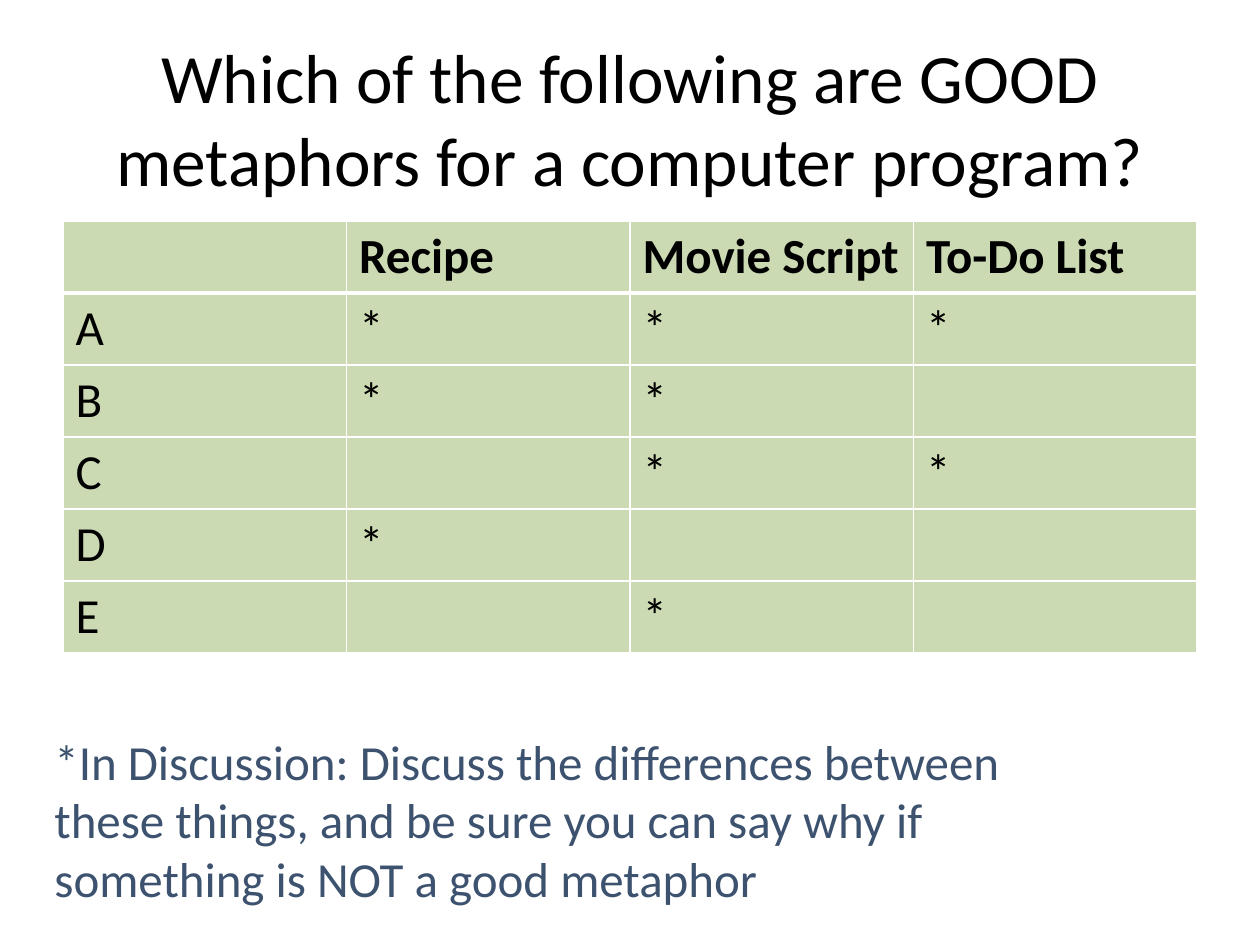
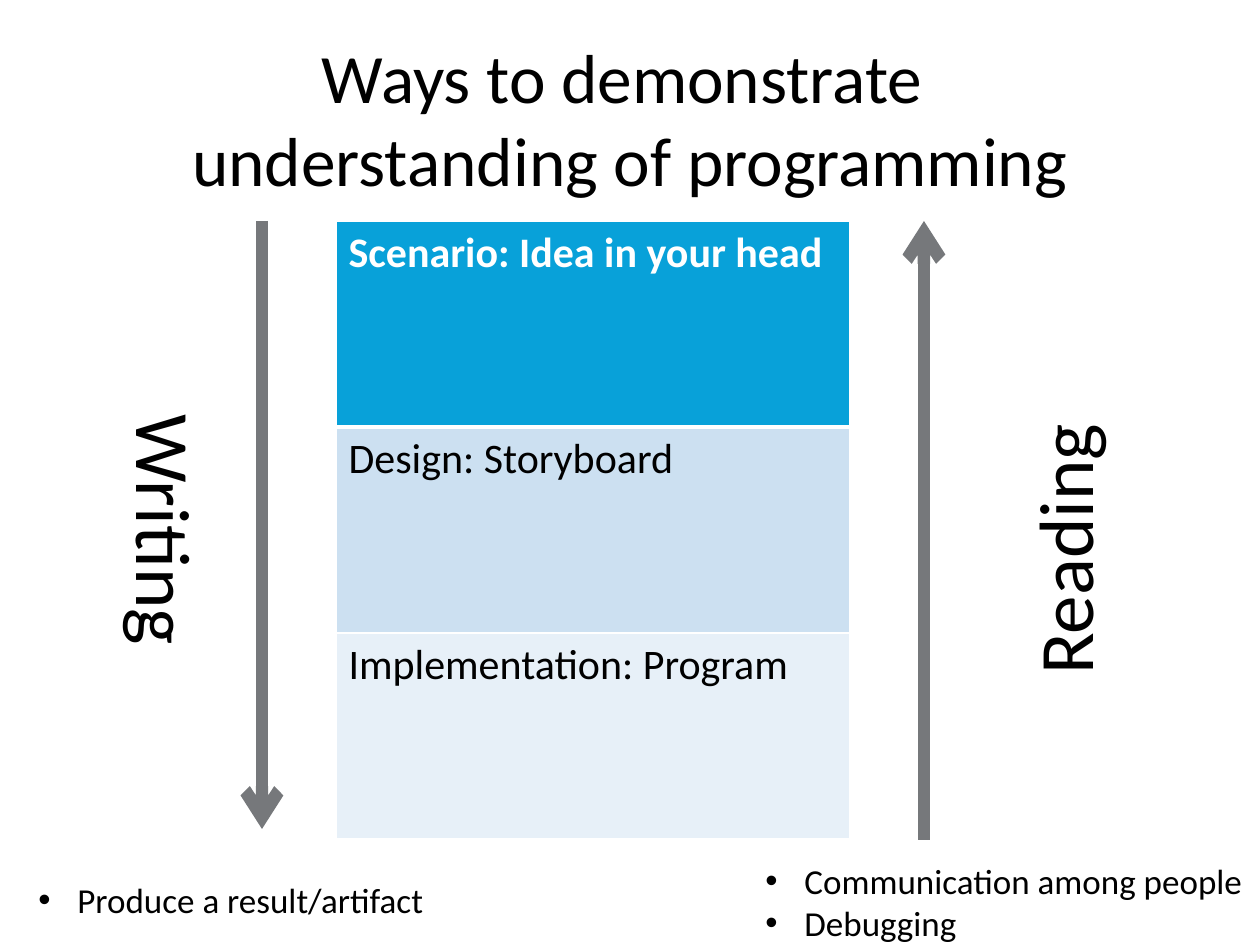
"""Build two slides on metaphors for and understanding of computer programs."""
from lxml.etree import SubElement
from pptx import Presentation
from pptx.dml.color import RGBColor
from pptx.enum.shapes import MSO_CONNECTOR
from pptx.enum.text import MSO_ANCHOR, PP_ALIGN
from pptx.oxml.ns import qn
from pptx.util import Emu, Pt

PX_PER_INCH = 126
COLORS = {
    "ink": "000000",
    "paper": "FFFFFF",
    "note": "3C526F",
    "green": "CCDAB3",
    "blue": "08A1D9",
    "mid_blue": "CCE0F1",
    "pale_blue": "E7F0F8",
    "arrow": "76787B",
}
TITLE_BOX = (63, 38, 1134, 158)
BULLET_INDENT = 39


def px(length):
    """Turn px into EMU."""
    return Emu(round(length * 914400 / PX_PER_INCH))


def rgb(name):
    """Look up a colour by name."""
    return RGBColor.from_string(COLORS[name])


def apply_format(target, values):
    """Set each attribute named in values on target."""
    for attribute, value in values.items():
        setattr(target, attribute, value)


def write_lines(paragraph, text, size, color="ink", bold=False):
    """Write text into a paragraph, with a line break at each newline."""
    for index, line in enumerate(text.split("\n")):
        if index:
            paragraph.add_line_break()
        run = paragraph.add_run()
        run.text = line
        apply_format(run.font, {"name": "Calibri", "size": Pt(size), "bold": bold})
        run.font.color.rgb = rgb(color)


def add_label(slide, box, text, size, color="ink", wrap=False, rotation=0):
    """Add a text box holding one paragraph and return it."""
    label = slide.shapes.add_textbox(*map(px, box))
    label.rotation = rotation
    label.text_frame.word_wrap = wrap
    write_lines(label.text_frame.paragraphs[0], text, size, color)
    return label


def add_title(slide, text):
    """Add the centred slide title."""
    title = add_label(slide, TITLE_BOX, text, 39.6, wrap=True)
    title.text_frame.vertical_anchor = MSO_ANCHOR.MIDDLE
    title.text_frame.paragraphs[0].alignment = PP_ALIGN.CENTER


def add_bullets(slide, box, items):
    """Add a bulleted list."""
    frame = slide.shapes.add_textbox(*map(px, box)).text_frame
    frame.word_wrap = False
    for index, item in enumerate(items):
        paragraph = frame.add_paragraph() if index else frame.paragraphs[0]
        write_lines(paragraph, item, 20)
        properties = paragraph._p.get_or_add_pPr()
        properties.set("marL", str(px(BULLET_INDENT)))
        properties.set("indent", str(-px(BULLET_INDENT)))
        SubElement(properties, qn("a:buFont"), typeface="Arial")
        SubElement(properties, qn("a:buChar"), char="•")


def add_border(cell, side, width):
    """Draw a white border on one side of a cell."""
    border = SubElement(cell._tc.get_or_add_tcPr(), qn(f"a:ln{side}"), w=str(Pt(width)))
    fill = SubElement(border, qn("a:solidFill"))
    SubElement(fill, qn("a:srgbClr"), val=COLORS["paper"])


def add_grid(slide, box, rows, fills, size, header_color):
    """Add a table with a bold header row and one fill for each row."""
    grid = slide.shapes.add_table(len(rows), len(rows[0]), *map(px, box)).table
    for row_index, (texts, fill) in enumerate(zip(rows, fills)):
        is_header = row_index == 0
        for column_index, text in enumerate(texts):
            cell = grid.cell(row_index, column_index)
            for side in "LRTB":
                thick = (is_header and side == "B") or (row_index == 1 and side == "T")
                add_border(cell, side, 3 if thick else 1)
            cell.fill.solid()
            cell.fill.fore_color.rgb = rgb(fill)
            if text:
                color = header_color if is_header else "ink"
                write_lines(cell.text_frame.paragraphs[0], text, size, color, is_header)


def add_arrow(slide, x, start, end):
    """Add a thick vertical arrow from start to end."""
    arrow = slide.shapes.add_connector(
        MSO_CONNECTOR.STRAIGHT, px(x), px(start), px(x), px(end)
    )
    arrow.line.color.rgb = rgb("arrow")
    arrow.line.width = Pt(7)
    properties = arrow.element.spPr
    SubElement(properties.find(qn("a:ln")), qn("a:tailEnd"), type="arrow")
    SubElement(properties, qn("a:effectLst"))


def build_metaphors(slide):
    """Build the question on metaphors."""
    add_title(slide, "Which of the following are GOOD metaphors for a computer program?")
    answers = [
        ["", "Recipe", "Movie Script", "To-Do List"],
        ["A", "*", "*", "*"],
        ["B", "*", "*", ""],
        ["C", "", "*", "*"],
        ["D", "*", "", ""],
        ["E", "", "*", ""],
    ]
    fills = ["green"] * len(answers)
    add_grid(slide, (63, 221, 1134, 432), answers, fills, 28, "ink")
    discussion = (
        "*In Discussion: Discuss the differences between these things, "
        "and be sure you can say why if something is NOT a good metaphor"
    )
    add_label(slide, (42, 725, 1029, 190), discussion, 28, "note", wrap=True)


def build_understanding(slide):
    """Build the stages between writing and reading a program."""
    add_title(slide, "Ways to demonstrate \nunderstanding of programming")
    stages = [
        ["Scenario: Idea in your head"],
        ["Design: Storyboard"],
        ["Implementation: Program"],
    ]
    fills = ["blue", "mid_blue", "pale_blue"]
    add_grid(slide, (336, 221, 514, 618), stages, fills, 24, "paper")
    add_arrow(slide, 262, 221, 829)
    add_arrow(slide, 924, 840, 221)
    add_label(slide, (38, 478, 258, 106), "Writing", 44, rotation=90)
    add_label(slide, (924, 495, 278, 106), "Reading", 44, rotation=270)
    add_bullets(slide, (26, 872, 416, 55), ["Produce a result/artifact"])
    add_bullets(slide, (753, 853, 507, 97), ["Communication among people", "Debugging"])


def main():
    """Build and save the slides."""
    deck = Presentation()
    apply_format(deck, {"slide_width": px(1260), "slide_height": px(945)})
    for build in (build_metaphors, build_understanding):
        build(deck.slides.add_slide(deck.slide_layouts[6]))
    deck.save("out.pptx")


if __name__ == "__main__":
    main()
